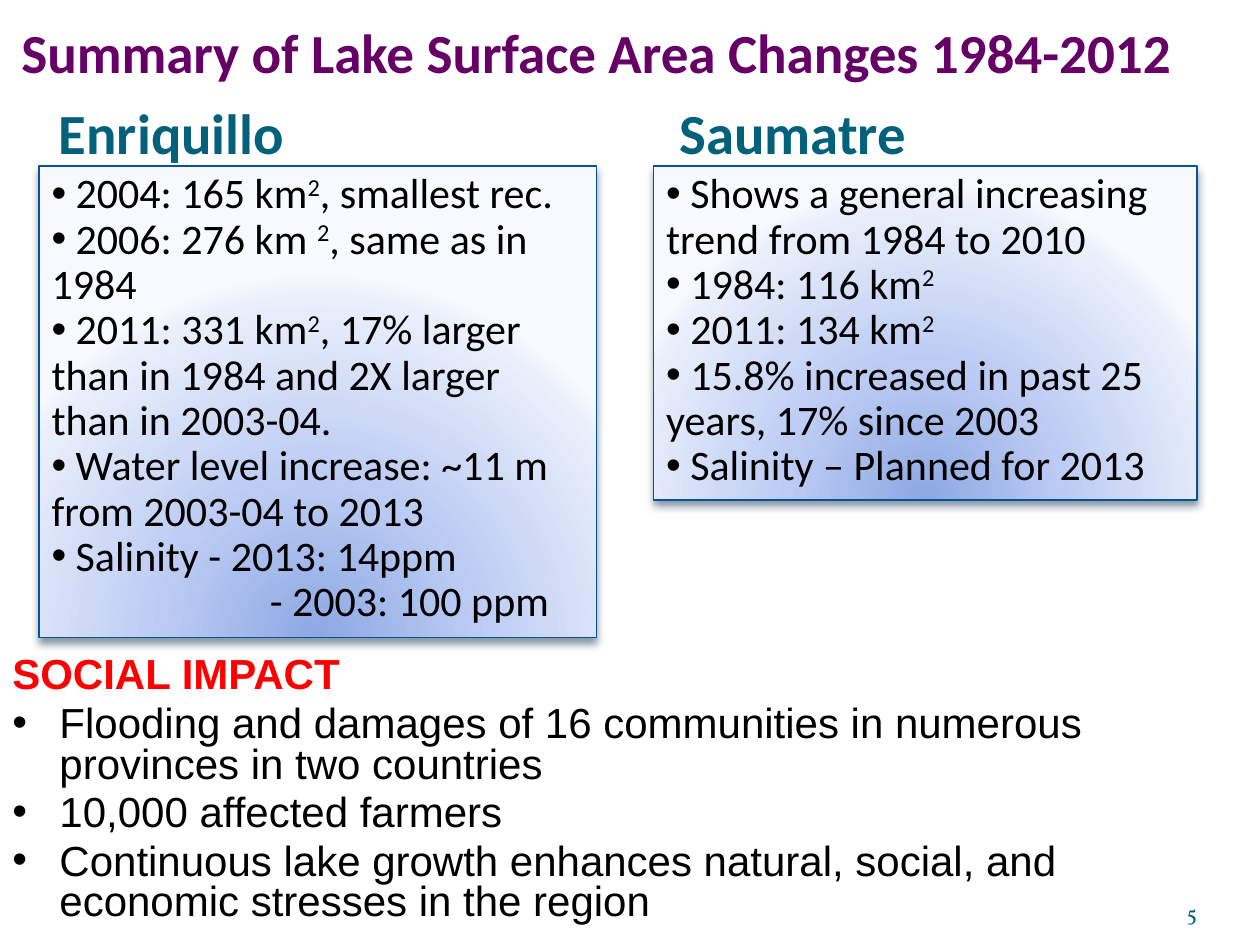
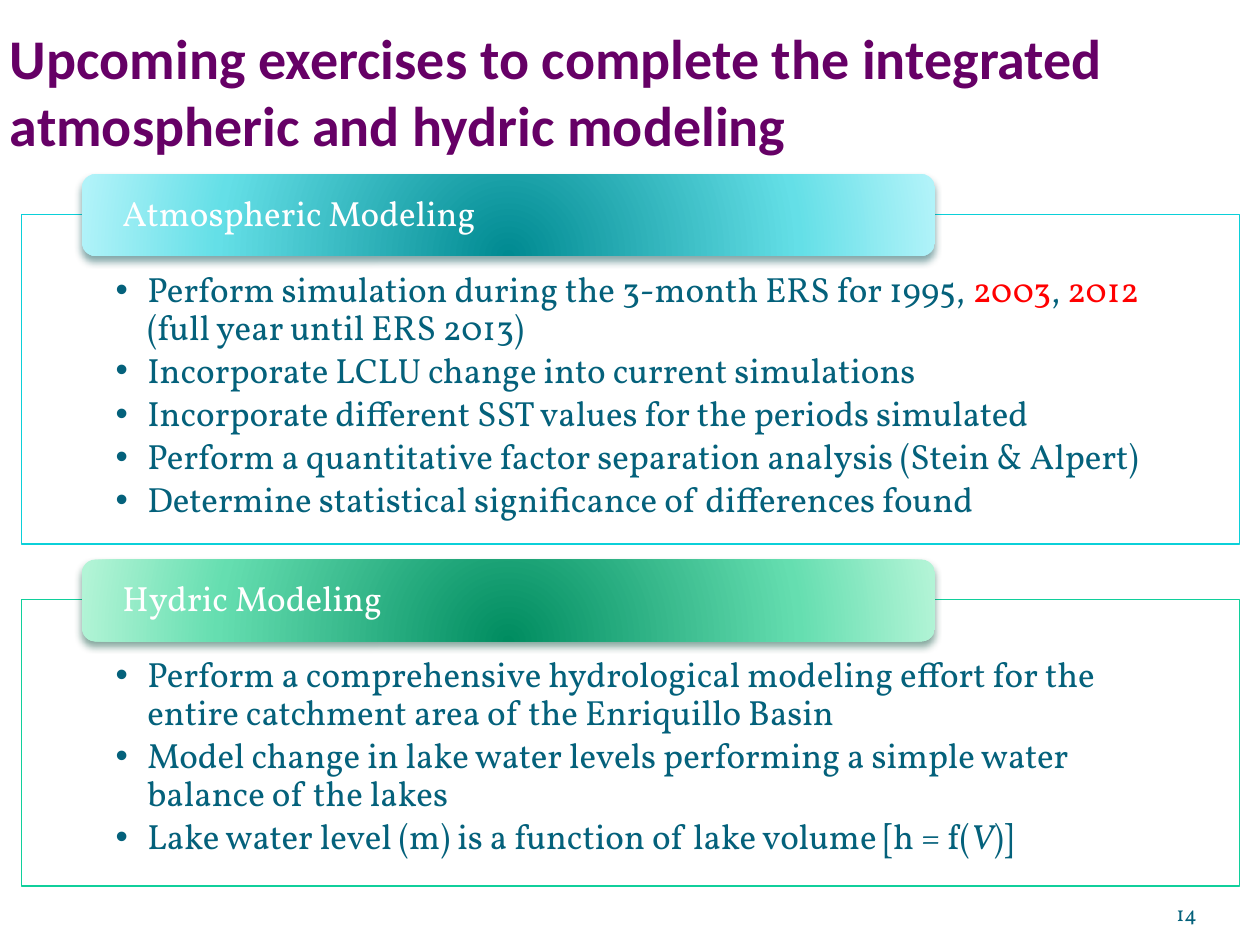
from lxml import etree
from pptx import Presentation
from pptx import util as u
from pptx.dml.color import RGBColor
from pptx.enum import shapes, text
from pptx.oxml import ns

Cm, Pt = u.Cm, u.Pt
PLUM = RGBColor(0x66, 0x00, 0x66)
TEAL = RGBColor(0x04, 0x61, 0x7B)
DUSK = RGBColor(0x04, 0x5D, 0x75)
RED = RGBColor(0xFF, 0x00, 0x00)
BLACK = RGBColor(0x00, 0x00, 0x00)
WHITE = RGBColor(0xFF, 0xFF, 0xFF)
NAVY = RGBColor(0x09, 0x52, 0x95)
NIGHT = RGBColor(0x04, 0x27, 0x47)
CYAN = RGBColor(0x0B, 0xD0, 0xD9)
DEEP = RGBColor(0x02, 0x4B, 0x4E)
GREEN = RGBColor(0x10, 0xCF, 0x9B)
PINE = RGBColor(0x04, 0x4A, 0x37)

# Gradient stops: position in percent and colour
HAZE = [(0, RGBColor(0x8D, 0xA8, 0xE3)), (43, RGBColor(0xBB, 0xCB, 0xF3)),
        (93, RGBColor(0xEA, 0xEF, 0xFB)), (100, RGBColor(0xF7, 0xF9, 0xFF))]
SEA = [(0, RGBColor(0x00, 0x8A, 0x91)), (68, RGBColor(0x64, 0xDF, 0xE7)),
       (100, RGBColor(0xB1, 0xF3, 0xF9))]
LEAF = [(0, RGBColor(0x00, 0x8C, 0x60)), (68, RGBColor(0x65, 0xDE, 0xB0)),
        (100, RGBColor(0xB2, 0xF4, 0xD6))]

TOP, MID, LOW = text.MSO_ANCHOR.TOP, text.MSO_ANCHOR.MIDDLE, text.MSO_ANCHOR.BOTTOM
LEFT, RIGHT = text.PP_ALIGN.LEFT, text.PP_ALIGN.RIGHT
RECT, ROUND = shapes.MSO_SHAPE.RECTANGLE, shapes.MSO_SHAPE.ROUNDED_RECTANGLE
UP = {"base": 30000}


def write(shape, lines, size, font, color, bold=False, anchor=TOP, align=LEFT,
          pad=(0, 0.13, 0, 0), dot=False, left=0, hang=0, lead=1, before=0, after=0):
    """Add lines to a shape; a line is a string or a list of strings and (string, format)."""
    frame = shape.text_frame
    frame.word_wrap = True
    frame.vertical_anchor = anchor
    (frame.margin_left, frame.margin_top,
     frame.margin_right, frame.margin_bottom) = map(Cm, pad)
    for i, line in enumerate(lines):
        para = frame.add_paragraph() if i or frame.text else frame.paragraphs[0]
        para.alignment, para.line_spacing = align, lead
        para.space_before, para.space_after = Pt(before), Pt(after)
        props = para._p.get_or_add_pPr()
        props.set("marL", str(Cm(left)))
        props.set("indent", str(Cm(-hang)))
        if dot:
            etree.SubElement(props, ns.qn("a:buFont")).set("typeface", "Arial")
            etree.SubElement(props, ns.qn("a:buChar")).set("char", "•")
        for part in [line] if isinstance(line, str) else line:
            words, form = (part, {}) if isinstance(part, str) else part
            run = para.add_run()
            run.text = words
            run.font.size, run.font.name, run.font.bold = Pt(size), font, bold
            run.font.color.rgb = form.get("color", color)
            if "italic" in form:
                run.font.italic = form["italic"]
            if "base" in form:
                run.font._element.set("baseline", str(form["base"]))


def glow(shape, stops, shade):
    """Fill from a centre below the shape and drop a soft shadow."""
    marks = "".join(f'<a:gs pos="{pos * 1000}"><a:srgbClr val="{tint}"/></a:gs>'
                    for pos, tint in stops)
    space = ns.nsdecls("a")
    fill = etree.fromstring(
        f'<a:gradFill {space} rotWithShape="1"><a:gsLst>{marks}</a:gsLst><a:path path="circle">'
        '<a:fillToRect l="50000" t="130000" r="50000" b="-30000"/></a:path></a:gradFill>')
    cast = etree.fromstring(
        f'<a:outerShdw {space} blurRad="{Pt(4.5)}" dist="{Pt(3)}" dir="5400000" rotWithShape="0">'
        f'<a:srgbClr val="{shade}"><a:alpha val="48000"/></a:srgbClr></a:outerShdw>')
    shape.shadow.inherit = False
    props = shape._element.spPr
    props.find(ns.qn("a:prstGeom")).addnext(fill)
    props.find(ns.qn("a:effectLst")).append(cast)


deck = Presentation()
deck.slide_width, deck.slide_height = Cm(25.4), Cm(19.05)

# Titles and slide numbers
pages = []
for title, size, spot, num, tint in [
        ("Summary of Lake Surface Area Changes 1984-2012", 31.5,
         (0.43, 0, 24.33, 1.7), "5", DUSK),
        ("Upcoming exercises to complete the integrated atmospheric and hydric modeling", 32,
         (0.2, 0, 25.2, 3.18), "14", TEAL)]:
    page = deck.slides.add_slide(deck.slide_layouts[6])
    pages.append(page)
    box = page.shapes.add_textbox(*map(Cm, spot))
    write(box, [title], size, "Calibri", PLUM, bold=True, anchor=LOW)
    box = page.shapes.add_textbox(Cm(22.02), Cm(17.65), Cm(2.11), Cm(1.02))
    write(box, [num], 12, "Vollkorn", tint, anchor=LOW, align=RIGHT, pad=(0, 0, 0, 0))
lakes, plans = pages

# Lake boxes
facts = dict(size=24, font="Calibri", color=BLACK, lead=0.9, pad=(0.25, 0.13, 0.25, 0.13))
cards = []
for name, edge, x, wide, high, lines in [
        ("Enriquillo", 1.19, 0.79, 11.23, 9.5, [
            [" 2004: 165 km", ("2", UP), ", smallest rec."],
            [" 2006: 276 km ", ("2", UP), ", same as in 1984"],
            [" 2011: 331 km", ("2", UP),
             ", 17% larger than in 1984 and 2X larger than in 2003-04."],
            " Water level increase: ~11 m from 2003-04 to 2013",
            " Salinity - 2013: 14ppm"]),
        ("Saumatre", 13.7, 13.18, 10.95, 6.73, [
            " Shows a general increasing trend from 1984 to 2010",
            [" 1984: 116 km", ("2", UP)],
            [" 2011: 134 km", ("2", UP)],
            " 15.8% increased in past 25 years, 17% since 2003",
            " Salinity – Planned for 2013"])]:
    card = lakes.shapes.add_shape(RECT, Cm(x), Cm(3.35), Cm(wide), Cm(high))
    card.line.color.rgb, card.line.width = NAVY, Pt(0.75)
    glow(card, HAZE, NIGHT)
    write(card, lines, dot=True, **facts)
    cards.append(card)
    head = lakes.shapes.add_textbox(Cm(edge), Cm(2.08), Cm(9), Cm(1.27))
    write(head, [name], 32.4, "Calibri", TEAL, bold=True, anchor=LOW)
write(cards[0], ["- 2003: 100 ppm"], left=4.4, **facts)

# Social impact
box = lakes.shapes.add_textbox(Cm(0), Cm(13.13), Cm(25.12), Cm(5.92))
form = dict(size=24, font="Arial", lead=0.8, before=4.8, pad=(0.25, 0.13, 0.25, 0.13))
write(box, ["SOCIAL IMPACT"], color=RED, bold=True, **form)
write(box, ["Flooding and damages of 16 communities in numerous provinces in two countries",
            "10,000 affected farmers",
            "Continuous lake growth enhances natural, social, and economic stresses in the region"],
      color=BLACK, dot=True, left=0.95, hang=0.95, **form)

# Modeling panels, each with a band over its top edge
for name, y, high, edge, stops, shade, lines in [
        ("Atmospheric Modeling", 4.32, 6.65, CYAN, SEA, DEEP, [
            ["Perform simulation during the 3-month ERS for 1995, ", ("2003", {"color": RED}),
             ", ", ("2012", {"color": RED}), " (full year until ERS 2013)"],
            "Incorporate LCLU change into current simulations",
            "Incorporate different SST values for the periods simulated",
            "Perform a quantitative factor separation analysis (Stein & Alpert)",
            "Determine statistical significance of differences found"]),
        ("Hydric Modeling", 12.09, 5.77, GREEN, LEAF, PINE, [
            "Perform a comprehensive hydrological modeling effort for the entire catchment "
            "area of the Enriquillo Basin",
            "Model change in lake water levels performing a simple water balance of the lakes",
            ["Lake water level (m) is a function of lake volume [h = f(",
             ("V", {"italic": True}), ")]"]])]:
    panel = plans.shapes.add_shape(RECT, Cm(0.43), Cm(y), Cm(24.56), Cm(high))
    panel.shadow.inherit = False
    panel.fill.solid()
    panel.fill.fore_color.rgb = WHITE
    panel.line.color.rgb, panel.line.width = edge, Pt(0.75)
    write(panel, lines, 20, "Vollkorn", TEAL, dot=True, left=0.64, hang=0.64,
          lead=0.9, after=3, pad=(1.9, 1.17, 1.9, 0.41))
    band = plans.shapes.add_shape(ROUND, Cm(1.65), Cm(y - 0.81), Cm(17.2), Cm(1.65))
    band.line.fill.background()
    glow(band, stops, shade)
    write(band, [name], 20, "Vollkorn", WHITE, anchor=MID, lead=0.9, pad=(0.74, 0, 0.74, 0))

deck.save("out.pptx")
